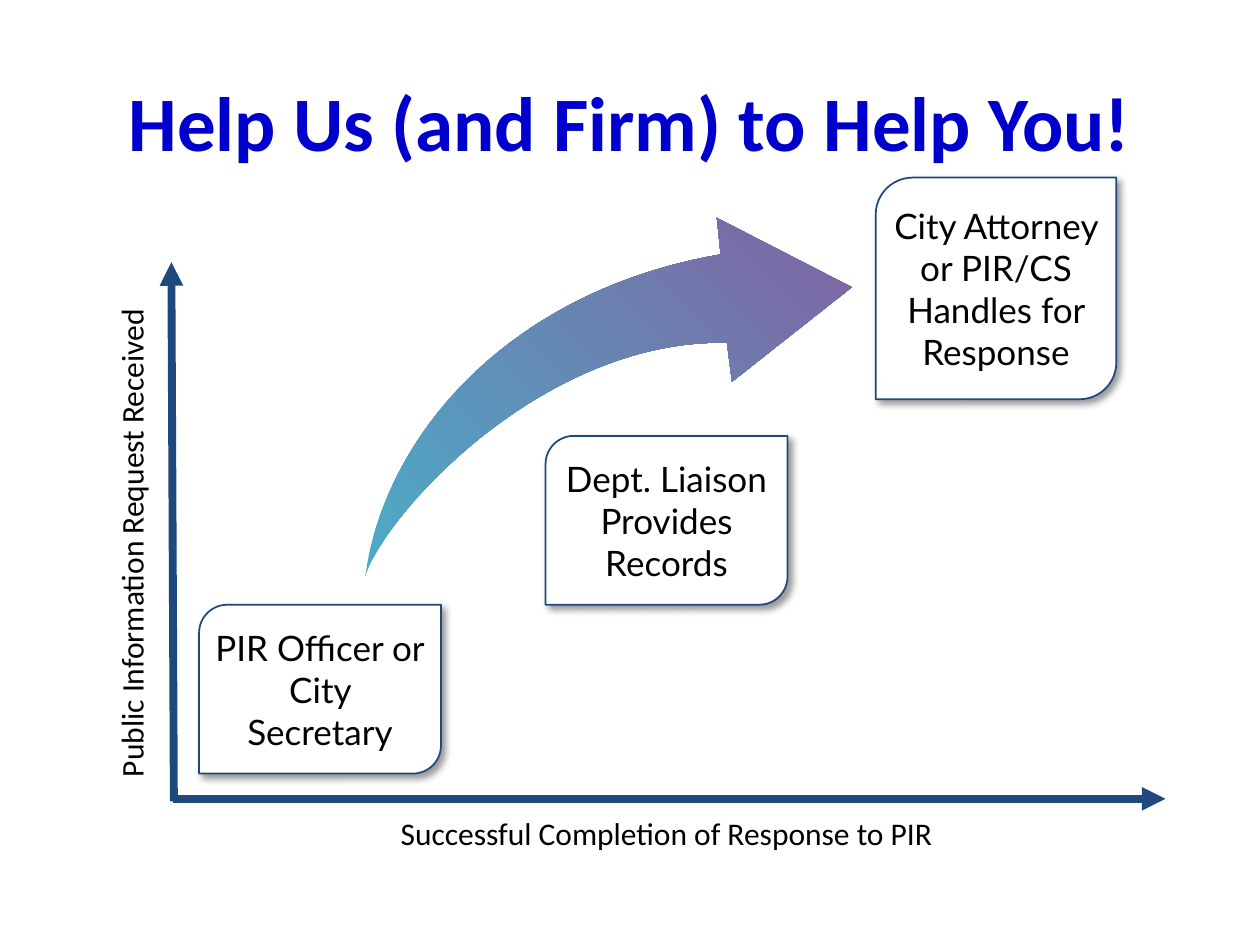
"""Build the slide on how a public information request moves to a response."""
from lxml.etree import SubElement
from pptx import Presentation
from pptx.dml.color import RGBColor
from pptx.enum.shapes import MSO_CONNECTOR, MSO_SHAPE
from pptx.enum.text import MSO_ANCHOR, MSO_AUTO_SIZE, PP_ALIGN
from pptx.oxml import parse_xml
from pptx.oxml.ns import nsdecls, qn
from pptx.util import Inches, Pt


def rgb(value):
    return RGBColor.from_string(value)


def curve(p0, p1, p2, p3, steps=40):
    points = []
    for i in range(1, steps + 1):
        t = i / steps
        weights = ((1 - t) ** 3, 3 * t * (1 - t) ** 2, 3 * t ** 2 * (1 - t), t ** 3)
        points.append(tuple(sum(w * p[axis] for w, p in zip(weights, (p0, p1, p2, p3)))
                            for axis in (0, 1)))
    return points


NAVY = "1F497D"
SHADOW = f"""<a:effectLst {nsdecls('a')}>
<a:outerShdw blurRad="{Pt(4)}" dist="{Pt(3)}" dir="2700000" algn="tl" rotWithShape="0">
<a:srgbClr val="000000"><a:alpha val="40000"/></a:srgbClr></a:outerShdw></a:effectLst>"""

prs = Presentation()
prs.slide_width, prs.slide_height = Inches(10), Inches(7.5)
s = prs.slides.add_slide(prs.slide_layouts[5])

title = s.shapes.title
title.left, title.top, title.width, title.height = map(Inches, (0.92, 0.33, 8.83, 1.25))
tf = title.text_frame
tf.text = "Help Us (and Firm) to Help You!"
tf.auto_size = MSO_AUTO_SIZE.NONE
tf.vertical_anchor = MSO_ANCHOR.MIDDLE
p = tf.paragraphs[0]
p.alignment = PP_ALIGN.LEFT
p.font.name, p.font.size, p.font.bold = "Calibri", Pt(44), True
p.font.color.rgb = rgb("0000CC")

for ends in ((1.37, 6.34, 9.25, 6.34), (1.38, 6.36, 1.36, 2.08)):
    axis = s.shapes.add_connector(MSO_CONNECTOR.STRAIGHT, *map(Inches, ends))
    axis.line.color.rgb = rgb(NAVY)
    axis.line.width = Pt(4.5)
    SubElement(axis.line._get_or_add_ln(), qn("a:tailEnd"), type="triangle")
    SubElement(axis._element.spPr, qn("a:effectLst"))

for text, box, rotation in (
    ("Successful Completion of Response to PIR", (1.58, 6.41, 7.42, 0.4), 0),
    ("Public Information Request Received", (-0.99, 4.11, 4.06, 0.4), 270),
):
    label = s.shapes.add_textbox(*map(Inches, box))
    label.rotation = rotation
    tf = label.text_frame
    tf.word_wrap = True
    tf.text = text
    p = tf.paragraphs[0]
    p.alignment = PP_ALIGN.CENTER
    p.font.name, p.font.size = "Calibri", Pt(18)
    p.font.color.rgb = rgb("000000")

start, neck_top, neck_bottom = (2.9, 4.57), (5.72, 2.02), (5.77, 2.72)
outline = curve(start, (3.05, 3.47), (4.03, 2.31), neck_top)
outline += [(5.69, 1.73), (6.76, 2.28), (5.81, 3.03), neck_bottom]
outline += curve(neck_bottom, (4.32, 2.69), (3.07, 4.06), start)
fb = s.shapes.build_freeform(Inches(start[0]), Inches(start[1]))
fb.add_line_segments([(Inches(x), Inches(y)) for x, y in outline], close=True)
arrow = fb.convert_to_shape()
arrow.shadow.inherit = False
arrow.line.fill.background()
arrow.fill.gradient()
arrow.fill.gradient_angle = 45
for stop, position, color in zip(arrow.fill.gradient_stops, (0, 1), ("4BACC6", "8064A2")):
    stop.position = position
    stop.color.rgb = rgb(color)

for lines, box in (
    (("PIR Officer or", "City Secretary"), (1.58, 4.8, 1.92, 1.34)),
    (("Dept. Liaison", "Provides", "Records"), (4.33, 3.46, 1.92, 1.34)),
    (("City Attorney or PIR/CS", "Handles for Response"), (6.95, 1.41, 1.91, 1.76)),
):
    sp = s.shapes.add_shape(MSO_SHAPE.ROUND_2_DIAG_RECTANGLE, *map(Inches, box))
    sp.fill.solid()
    sp.fill.fore_color.rgb = rgb("FFFFFF")
    sp.line.color.rgb = rgb(NAVY)
    sp.line.width = Pt(1)
    sp._element.spPr.append(parse_xml(SHADOW))
    tf = sp.text_frame
    tf.word_wrap = True
    tf.vertical_anchor = MSO_ANCHOR.MIDDLE
    tf.margin_left = tf.margin_right = tf.margin_top = tf.margin_bottom = Inches(0.05)
    tf.text = "\n".join(lines)
    for p in tf.paragraphs:
        p.alignment = PP_ALIGN.CENTER
        p.font.name, p.font.size = "Lato", Pt(20)
        p.font.color.rgb = rgb("000000")

prs.save("out.pptx")
